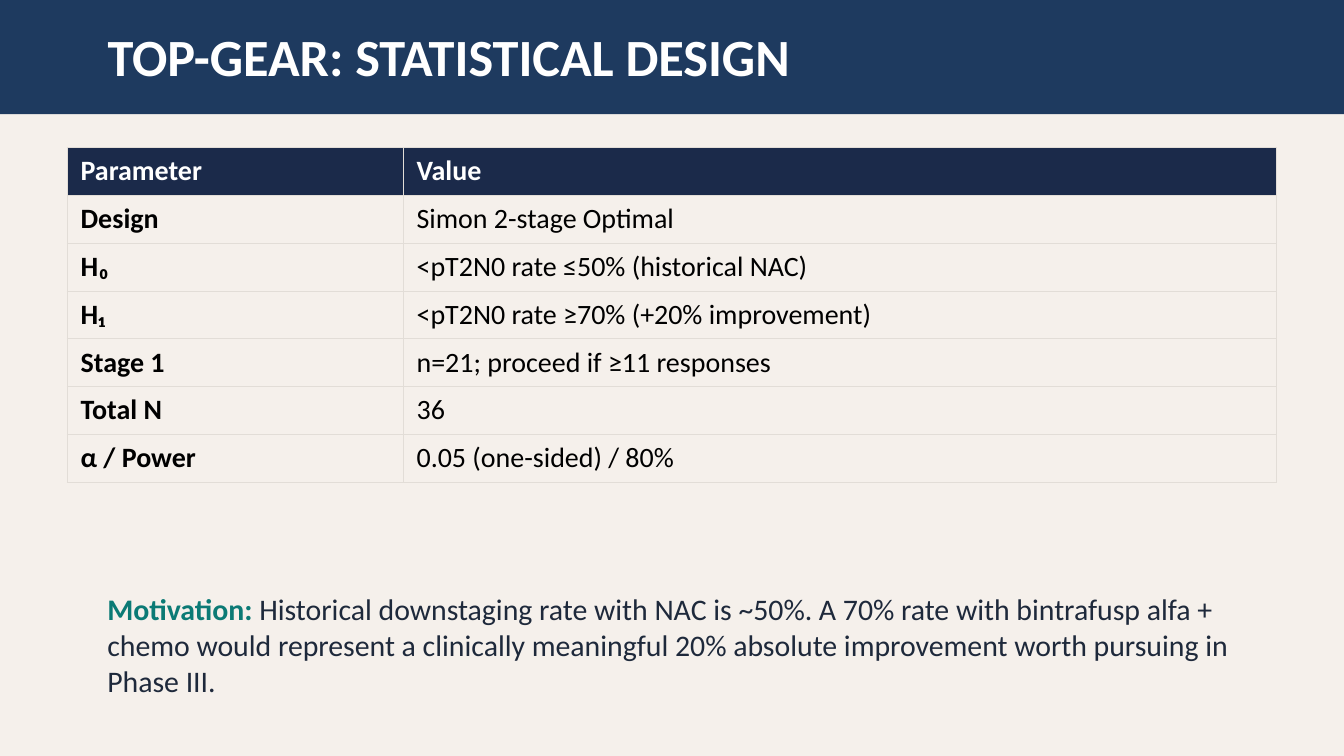
from lxml.etree import SubElement
from pptx import Presentation
from pptx.dml.color import RGBColor
from pptx.enum.shapes import MSO_SHAPE
from pptx.enum.text import MSO_ANCHOR, MSO_AUTO_SIZE, PP_ALIGN
from pptx.oxml.ns import qn
from pptx.util import Cm, Pt

FONT = "Calibri"
COLORS = {
    "background": "F5F0EB",
    "band": "1E3A5F",
    "header": "1B2A4A",
    "border": "E2DDD7",
    "accent": "0B7A75",
    "body": "1E293B",
    "white": "FFFFFF",
    "black": "000000",
}
DESIGN_ROWS = [
    ("Parameter", "Value"),
    ("Design", "Simon 2-stage Optimal"),
    ("H₀", "<pT2N0 rate ≤50% (historical NAC)"),
    ("H₁", "<pT2N0 rate ≥70% (+20% improvement)"),
    ("Stage 1", "n=21; proceed if ≥11 responses"),
    ("Total N", "36"),
    ("α / Power", "0.05 (one-sided) / 80%"),
]
COLUMN_WIDTHS = (Cm(6.35), Cm(16.51))
ROW_HEIGHT = Cm(0.89)
TEXT_LEFT, TEXT_WIDTH = Cm(1.78), Cm(21.84)


def rgb(name):
    return RGBColor.from_string(COLORS[name])


def add_run(p, text, size, color, bold=False):
    r = p.add_run()
    r.text = text
    r.font.name = FONT
    r.font.size = Pt(size)
    r.font.bold = bold
    r.font.color.rgb = rgb(color)


def add_band(s):
    sp = s.shapes.add_shape(MSO_SHAPE.RECTANGLE, 0, 0, Cm(25.4), Cm(2.16))
    sp.shadow.inherit = False
    sp.fill.solid()
    sp.fill.fore_color.rgb = rgb("band")
    sp.line.fill.background()
    # Send the band behind the title
    s.shapes.title._element.addprevious(sp._element)


def set_title(s, text):
    sp = s.shapes.title
    sp.left, sp.top, sp.width, sp.height = TEXT_LEFT, Cm(0.3), TEXT_WIDTH, Cm(1.52)
    tf = sp.text_frame
    tf.auto_size = MSO_AUTO_SIZE.NONE
    tf.vertical_anchor = MSO_ANCHOR.MIDDLE
    p = tf.paragraphs[0]
    p.alignment = PP_ALIGN.LEFT
    add_run(p, text, 28, "white", bold=True)


def set_borders(cell):
    tc_pr = cell._tc.get_or_add_tcPr()
    for side in ("lnL", "lnR", "lnT", "lnB"):
        ln = SubElement(tc_pr, qn(f"a:{side}"), w=str(Pt(0.5)))
        fill = SubElement(ln, qn("a:solidFill"))
        SubElement(fill, qn("a:srgbClr"), val=COLORS["border"])


def add_design_table(s, rows):
    frame = s.shapes.add_table(len(rows), len(COLUMN_WIDTHS), Cm(1.27), Cm(2.79),
                               sum(COLUMN_WIDTHS), ROW_HEIGHT * len(rows))
    table = frame.table
    table.horz_banding = False
    for column, width in zip(table.columns, COLUMN_WIDTHS):
        column.width = width
    for i, row in enumerate(rows):
        header = i == 0
        for j, text in enumerate(row):
            cell = table.cell(i, j)
            set_borders(cell)
            if header:
                cell.fill.solid()
                cell.fill.fore_color.rgb = rgb("header")
            else:
                cell.fill.background()
            add_run(cell.text_frame.paragraphs[0], text, 15,
                    "white" if header else "black", bold=header or j == 0)


def add_note(s, label, text):
    tf = s.shapes.add_textbox(TEXT_LEFT, Cm(10.92), TEXT_WIDTH, Cm(2.54)).text_frame
    tf.word_wrap = True
    tf.vertical_anchor = MSO_ANCHOR.MIDDLE
    p = tf.paragraphs[0]
    add_run(p, label, 16, "accent", bold=True)
    add_run(p, text, 16, "body")


def main():
    prs = Presentation()
    prs.slide_width, prs.slide_height = Cm(25.4), Cm(14.29)
    s = prs.slides.add_slide(prs.slide_layouts[5])
    s.background.fill.solid()
    s.background.fill.fore_color.rgb = rgb("background")

    # Heading
    add_band(s)
    set_title(s, "TOP-GEAR: STATISTICAL DESIGN")

    # Design parameters and the reasoning behind them
    add_design_table(s, DESIGN_ROWS)
    add_note(s, "Motivation: ",
             "Historical downstaging rate with NAC is ~50%. A 70% rate with "
             "bintrafusp alfa + chemo would represent a clinically meaningful "
             "20% absolute improvement worth pursuing in Phase III.")

    prs.save("out.pptx")


if __name__ == "__main__":
    main()
